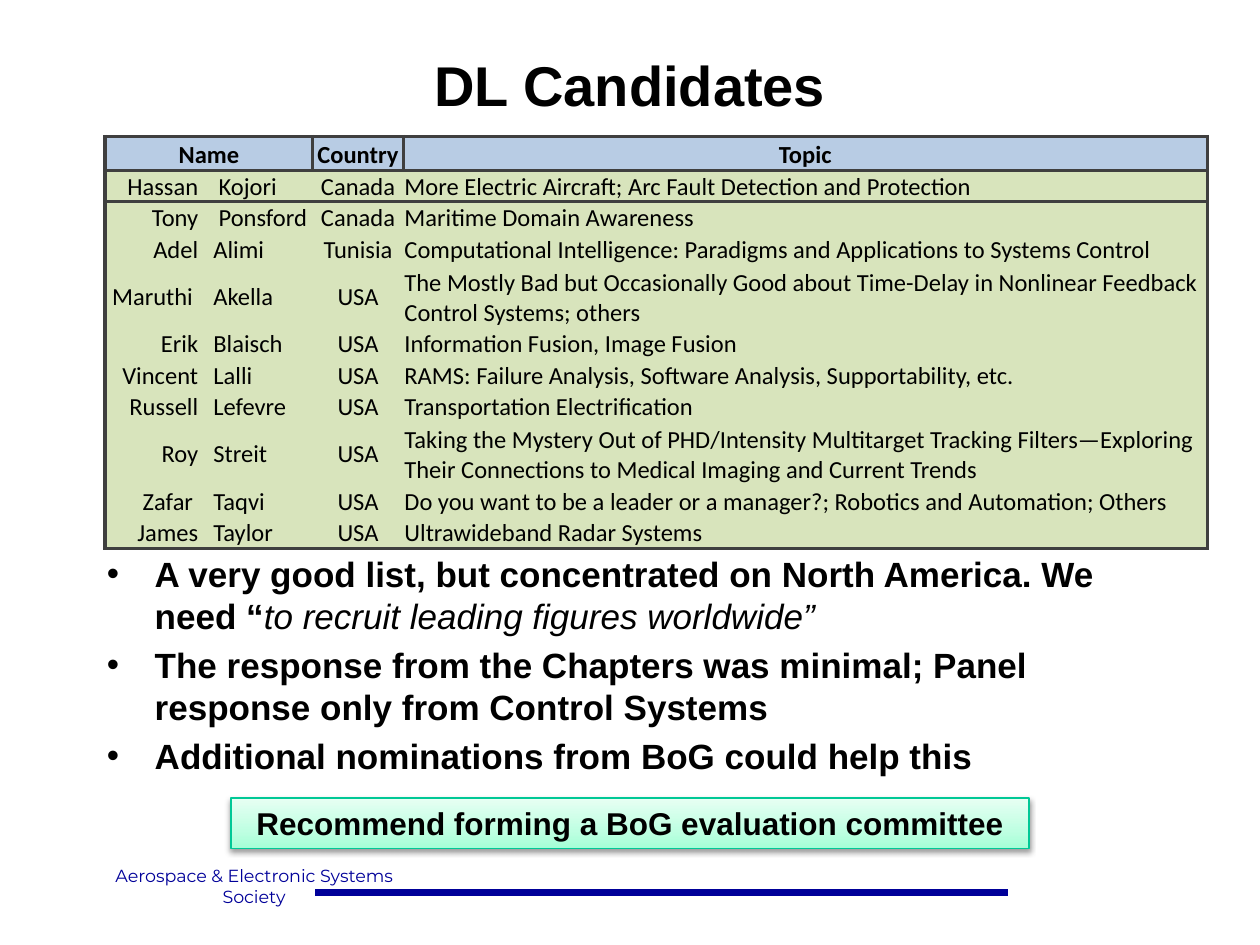
from copy import deepcopy
from dataclasses import dataclass
from typing import NamedTuple

from lxml.etree import SubElement
from pptx import Presentation
from pptx.dml.color import RGBColor
from pptx.enum.shapes import MSO_CONNECTOR as Line, MSO_SHAPE as Shape
from pptx.enum.text import MSO_ANCHOR as Anchor, PP_ALIGN as Align
from pptx.oxml import parse_xml
from pptx.oxml.ns import nsdecls, qn
from pptx.util import Emu, Inches, Pt


@dataclass(frozen=True)
class Theme:
    ink: str = "000000"
    navy: str = "000099"
    edge: str = "3F3F3F"
    head: str = "B8CCE4"
    body: str = "D8E4BC"
    mint: str = "00C896"
    fade: tuple = ((0, "A5FFD6"), (0.35, "BFFFE2"), (1, "E7FFF3"))
    sans: str = "Arial"
    grid: str = "Calibri"
    foot: str = "Montserrat"
    title: int = 32
    point: int = 20
    call: int = 18
    cell: int = 14
    small: int = 10


class Box(NamedTuple):
    """Left, top, width and height in grid units."""
    x: float
    y: float
    w: float
    h: float


class Person(NamedTuple):
    first: str
    last: str
    land: str
    topic: str
    lines: int = 1
    lead: float = 0
    trail: float = 0


T = Theme()
UNIT = Inches(1 / 12)  # the slide is 120 columns by 90 rows
COLS = (9, 1.2, 9.6, 8.6, 76.6)
HEAD, ROW = 3.2, 3
GAP = 0.5
PEOPLE = (
    Person("Hassan", "Kojori", "Canada",
           "More Electric Aircraft; Arc Fault Detection and Protection", lead=GAP),
    Person("Tony", "Ponsford", "Canada", "Maritime Domain Awareness", lead=GAP),
    Person("Adel", "Alimi", "Tunisia",
           "Computational Intelligence: Paradigms and Applications to Systems Control"),
    Person("Maruthi", "Akella", "USA",
           "The Mostly Bad but Occasionally Good about Time-Delay in Nonlinear "
           "Feedback Control Systems; others", 2, trail=GAP),
    Person("Erik", "Blaisch", "USA", "Information Fusion, Image Fusion"),
    Person("Vincent", "Lalli", "USA",
           "RAMS: Failure Analysis, Software Analysis, Supportability, etc."),
    Person("Russell", "Lefevre", "USA", "Transportation Electrification"),
    Person("Roy", "Streit", "USA",
           "Taking the Mystery Out of PHD/Intensity Multitarget Tracking "
           "Filters—Exploring Their Connections to Medical Imaging and Current "
           "Trends", 2),
    Person("Zafar", "Taqvi", "USA",
           "Do you want to be a leader or a manager?; Robotics and Automation; Others",
           trail=GAP),
    Person("James", "Taylor", "USA", "Ultrawideband Radar Systems"),
)
POINTS = (
    ("A very good list, but concentrated on North America. We need “",
     "to recruit leading figures worldwide”"),
    ("The response from the Chapters was minimal; Panel response only from "
     "Control Systems",),
    ("Additional nominations from BoG could help this",),
)


def grid(n: float) -> Emu:
    return Emu(round(n * UNIT))


def rgb(code: str) -> RGBColor:
    return RGBColor.from_string(code)


def write(para, text: str, *, size: int, font: str = T.sans, color: str = T.ink,
          bold: bool = False, italic: bool = False, align=Align.LEFT) -> None:
    para.alignment = align
    if not text:  # an empty cell still needs a type size to keep its row low
        SubElement(para._p, qn("a:endParaRPr"), sz=str(size * 100))
        return
    run = para.add_run()
    run.text = text
    face = run.font
    face.size, face.name, face.bold, face.italic = Pt(size), font, bold, italic
    face.color.rgb = rgb(color)


def frame(slide, box: Box, wrap: bool = True):
    area = slide.shapes.add_textbox(*map(grid, box)).text_frame
    area.word_wrap = wrap
    return area


def bullet(para) -> None:
    prop = para._p.get_or_add_pPr()
    prop.set("marL", str(Inches(0.38)))
    prop.set("indent", str(-Inches(0.38)))
    SubElement(prop, qn("a:buFont"), typeface=T.sans)
    SubElement(prop, qn("a:buChar"), char="•")


def border(cell, sides: str) -> None:
    prop = cell._tc.get_or_add_tcPr()
    for side in sides:
        prop.append(parse_xml(
            f'<a:ln{side} {nsdecls("a")} w="{Pt(2)}"><a:solidFill>'
            f'<a:srgbClr val="{T.edge}"/></a:solidFill></a:ln{side}>'))


def put(cell, text: str, sides: str, fill: str, *, lead: float = 0,
        trail: float = 0, anchor=Anchor.BOTTOM, **form) -> None:
    """Fill one table cell; sides names its borders in the order L, R, T, B."""
    border(cell, sides)
    cell.fill.solid()
    cell.fill.fore_color.rgb = rgb(fill)
    cell.margin_left, cell.margin_right = grid(0.12 + lead), grid(0.12 + trail)
    cell.margin_top, cell.margin_bottom = Inches(0.01), 0
    cell.vertical_anchor = anchor
    write(cell.text_frame.paragraphs[0], text, size=T.cell, font=T.grid, **form)


def roster(slide, x: float, y: float) -> None:
    rows = [HEAD] + [ROW * p.lines for p in PEOPLE]
    box = Box(x, y, sum(COLS), sum(rows))
    table = slide.shapes.add_table(len(rows), len(COLS), *map(grid, box)).table
    table.first_row = table.horz_banding = False
    style = table._tbl.tblPr.find(qn("a:tableStyleId"))
    style.text = "{2D5ABB26-0587-4C30-8999-92F81FD0307C}"
    for col, wide in zip(table.columns, COLS):
        col.width = grid(wide)
    for row, high in zip(table.rows, rows):
        row.height = grid(high)
    table.cell(0, 0).merge(table.cell(0, 2))
    for c, text in enumerate(("Name", "", "", "Country", "Topic")):
        put(table.cell(0, c), text, "LRTB", T.head, bold=True, align=Align.CENTER)
    aligns = (Align.RIGHT, Align.LEFT, Align.LEFT, Align.CENTER, Align.LEFT)
    last = len(COLS) - 1
    for r, who in enumerate(PEOPLE, 1):
        texts = (who.first, "", who.last, who.land, who.topic)
        for c, (text, align) in enumerate(zip(texts, aligns)):
            sides = ("L" * (c == 0) + "R" * (c == last)
                     + "T" * (r == 1) + "B" * (r == len(PEOPLE)))
            mid = who.lines > 1 and c < last
            put(table.cell(r, c), text, sides, T.body, align=align,
                lead=who.lead if c == 2 else 0, trail=who.trail if c == 0 else 0,
                anchor=Anchor.MIDDLE if mid else Anchor.BOTTOM)


def callout(slide, box: Box, text: str) -> None:
    shape = slide.shapes.add_shape(Shape.RECTANGLE, *map(grid, box))
    shape.line.color.rgb, shape.line.width = rgb(T.mint), Pt(0.75)
    shape.fill.gradient()
    shape.fill.gradient_angle = 90
    stops = shape._element.spPr.find(qn("a:gradFill")).find(qn("a:gsLst"))
    stops.insert(1, deepcopy(stops[0]))
    for stop, (pos, color) in zip(shape.fill.gradient_stops, T.fade):
        stop.position, stop.color.rgb = pos, rgb(color)
    shape.shadow.inherit = False
    glow = shape._element.spPr.find(qn("a:effectLst"))
    glow.append(parse_xml(
        f'<a:outerShdw {nsdecls("a")} blurRad="{Pt(3.1)}" dist="{Pt(1.6)}" '
        f'dir="5400000" rotWithShape="0"><a:srgbClr val="{T.ink}">'
        '<a:alpha val="38000"/></a:srgbClr></a:outerShdw>'))
    shape.text_frame.word_wrap = True
    write(shape.text_frame.paragraphs[0], text, size=T.call, bold=True,
          align=Align.CENTER)


def footer(slide) -> None:
    rule = slide.shapes.add_connector(Line.STRAIGHT, *map(grid, (30, 85, 96, 85)))
    rule.line.color.rgb, rule.line.width = rgb(T.navy), Pt(4)
    SubElement(rule._element.spPr, qn("a:effectLst"))
    area = frame(slide, Box(8, 81.8, 32.4, 5.2), wrap=False)
    for i, text in enumerate(("Aerospace & Electronic Systems", "Society")):
        write(area.add_paragraph() if i else area.paragraphs[0], text,
              size=T.small, font=T.foot, color=T.navy, align=Align.CENTER)


def main() -> None:
    deck = Presentation()
    deck.slide_width, deck.slide_height = grid(120), grid(90)
    slide = deck.slides.add_slide(deck.slide_layouts[6])
    footer(slide)
    title = frame(slide, Box(9, 4, 102, 8))
    title.vertical_anchor = Anchor.MIDDLE
    write(title.paragraphs[0], "DL Candidates", size=T.title, bold=True,
          align=Align.CENTER)
    area = frame(slide, Box(9, 52, 102, 26))
    for i, parts in enumerate(POINTS):
        para = area.add_paragraph() if i else area.paragraphs[0]
        bullet(para)
        if i:
            para.space_before = Pt(T.point * 0.2)
        for j, text in enumerate(parts):
            write(para, text, size=T.point, bold=j == 0, italic=j > 0)
    callout(slide, Box(22, 76, 76, 4.8), "Recommend forming a BoG evaluation committee")
    roster(slide, 10, 13)
    deck.save("out.pptx")


if __name__ == "__main__":
    main()
